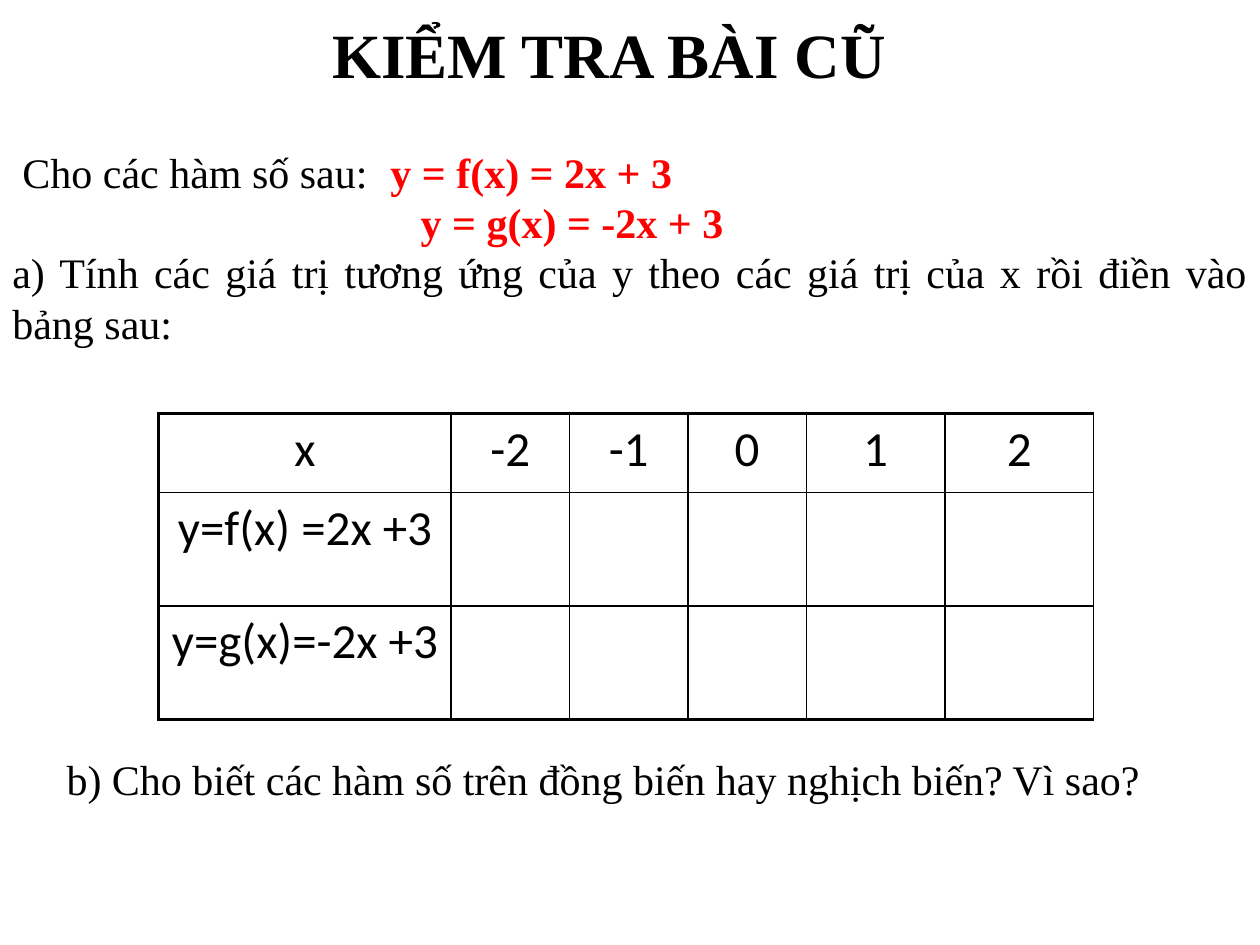
from lxml import etree
from pptx import Presentation
from pptx.dml.color import RGBColor
from pptx.enum.text import MSO_AUTO_SIZE, PP_ALIGN
from pptx.oxml.ns import qn
from pptx.util import Inches, Pt

CENTER, JUSTIFY = PP_ALIGN.CENTER, PP_ALIGN.JUSTIFY
GROW = MSO_AUTO_SIZE.SHAPE_TO_FIT_TEXT
SERIF, SANS = "Times New Roman", "Calibri"
BLACK, RED = "000000", "FF0000"
THIN, THICK = 1, 2.25
EQUATION_LEFT = 3.24
COLUMN_WIDTHS = [2.32, 0.94, 0.94, 0.94, 1.1, 1.18]
ROW_HEIGHTS = [0.63, 0.9, 0.9]
VALUE_ROWS = [
    ["x", "-2", "-1", "0", "1", "2"],
    ["y=f(x) =2x +3"],
    ["y=g(x)=-2x +3"],
]


def color(value):
    return RGBColor.from_string(value)


def add_run(paragraph, text, size, font=SERIF, fill=BLACK, bold=False):
    run = paragraph.add_run()
    run.text = text
    run.font.size = Pt(size)
    run.font.name = font
    run.font.bold = bold
    run.font.color.rgb = color(fill)


def add_child(parent, tag, **attributes):
    child = etree.SubElement(parent, qn(tag))
    for name, value in attributes.items():
        child.set(name, str(value))
    return child


def set_indent(paragraph, left=0, first=0):
    properties = paragraph._p.get_or_add_pPr()
    properties.set("marL", str(Inches(left)))
    properties.set("indent", str(Inches(first)))
    return properties


def add_text_frame(slide, box):
    frame = slide.shapes.add_textbox(*map(Inches, box)).text_frame
    frame.word_wrap = True
    frame.auto_size = GROW
    return frame


def add_title(slide, box):
    paragraph = add_text_frame(slide, box).paragraphs[0]
    paragraph.alignment = CENTER
    add_run(paragraph, "KIỂM TRA BÀI CŨ", 36, bold=True)


def add_problem(slide, box):
    frame = add_text_frame(slide, box)
    given = frame.paragraphs[0]
    tabs = add_child(set_indent(given, first=0.08), "a:tabLst")
    add_child(tabs, "a:tab", pos=Inches(EQUATION_LEFT), algn="l")
    add_run(given, "Cho các hàm số sau:\t", 24)
    add_run(given, "y = f(x) = 2x + 3", 24, fill=RED, bold=True)

    second = frame.add_paragraph()
    set_indent(second, left=EQUATION_LEFT)
    add_run(second, "y = g(x) = -2x + 3", 24, fill=RED, bold=True)

    task = frame.add_paragraph()
    task.alignment = JUSTIFY
    properties = set_indent(task)
    add_child(properties, "a:buFont", typeface=SERIF)
    add_child(properties, "a:buAutoNum", type="alphaLcParenR")
    add_run(task, " Tính các giá trị tương ứng của y theo các giá trị của x "
                  "rồi điền vào bảng sau:", 24)


def add_question(slide, box):
    paragraph = add_text_frame(slide, box).paragraphs[0]
    add_run(paragraph, "b) Cho biết các hàm số trên đồng biến hay nghịch biến? "
                       "Vì sao?", 24)


def set_borders(cell, widths):
    """Draw black edges; widths are in the order left, right, top, bottom."""
    properties = cell._tc.get_or_add_tcPr()
    for position, (side, width) in enumerate(zip("LRTB", widths)):
        line = add_child(properties, f"a:ln{side}", w=Pt(width))
        add_child(add_child(line, "a:solidFill"), "a:srgbClr", val=BLACK)
        properties.insert(position, line)


def add_value_table(slide, box):
    row_count, column_count = len(ROW_HEIGHTS), len(COLUMN_WIDTHS)
    table = slide.shapes.add_table(row_count, column_count, *map(Inches, box)).table
    table.first_row = table.horz_banding = False
    for column, width in zip(table.columns, COLUMN_WIDTHS):
        column.width = Inches(width)
    for row, height in zip(table.rows, ROW_HEIGHTS):
        row.height = Inches(height)

    for row in range(row_count):
        for column in range(column_count):
            cell = table.cell(row, column)
            cell.fill.background()
            set_borders(cell, [
                THICK if column == 0 else THIN,
                THIN,
                THICK if row == 0 else THIN,
                THICK if row == row_count - 1 else THIN,
            ])
        for column, text in enumerate(VALUE_ROWS[row]):
            paragraph = table.cell(row, column).text_frame.paragraphs[0]
            paragraph.alignment = CENTER
            spacing = add_child(paragraph._p.get_or_add_pPr(), "a:spcBef")
            add_child(spacing, "a:spcPct", val=20000)
            add_run(paragraph, text, 28, font=SANS)


def main():
    presentation = Presentation()
    presentation.slide_width = Inches(10)
    presentation.slide_height = Inches(7.5)
    slide = presentation.slides.add_slide(presentation.slide_layouts[6])
    add_title(slide, (1.28, 0.07, 7.11, 0.71))
    add_problem(slide, (0, 1.11, 10, 1.72))
    add_question(slide, (0.43, 5.93, 9.14, 0.5))
    add_value_table(slide, (1.26, 3.28, sum(COLUMN_WIDTHS), sum(ROW_HEIGHTS)))
    presentation.save("out.pptx")


if __name__ == "__main__":
    main()
